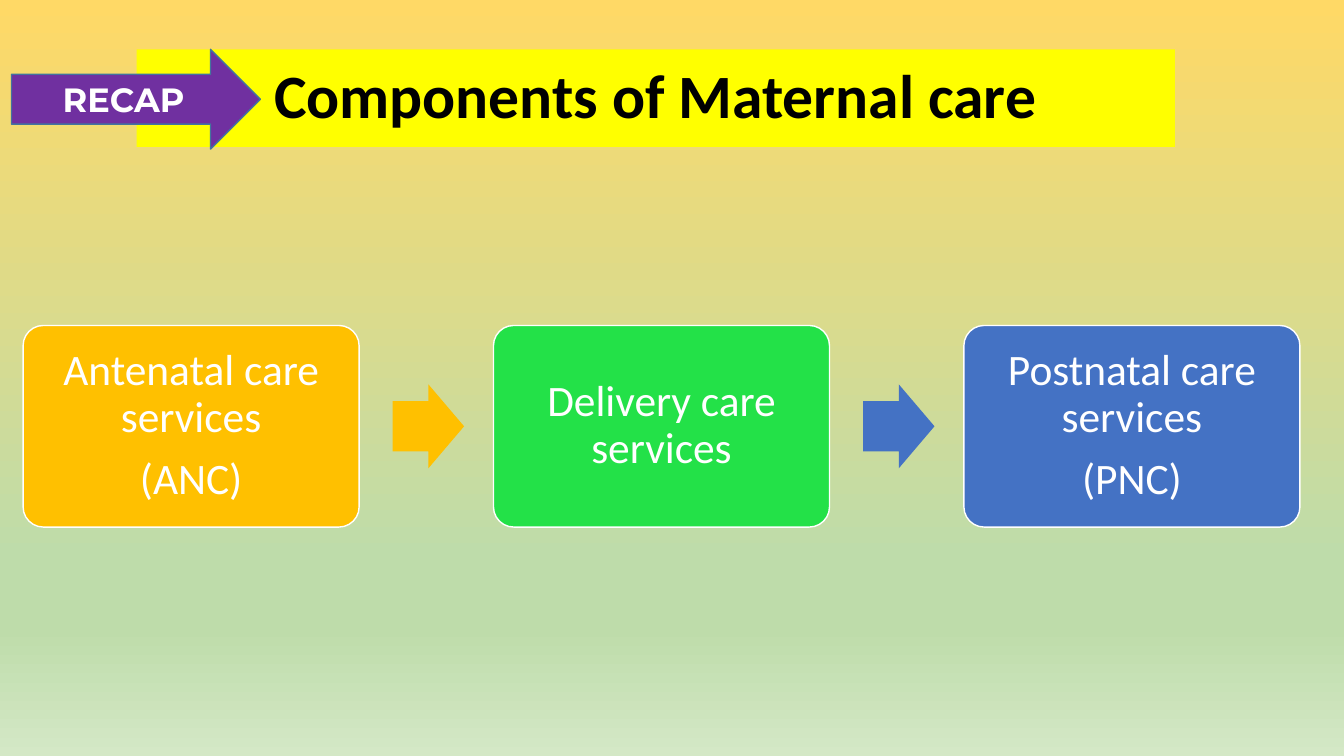
from copy import deepcopy

from pptx import Presentation
from pptx.dml.color import RGBColor
from pptx.enum.shapes import MSO_SHAPE
from pptx.enum.text import MSO_ANCHOR, PP_ALIGN
from pptx.oxml.ns import qn
from pptx.util import Emu, Pt

PX = 9525  # EMU in one px, slide is 1280 x 720 px
COLORS = {
    "yellow": "FFFF00", "amber": "FFC000", "green": "23E148", "blue": "4472C4",
    "purple": "7030A0", "outline": "43739E", "white": "FFFFFF", "black": "000000",
    "sky": "FFD966", "meadow": "BEDCAA", "ground": "D4E8C6",
}


def color(name):
    return RGBColor.from_string(COLORS[name])


class SlideBuilder:
    def __init__(self, slide, font_name):
        self.slide = slide
        self.font_name = font_name

    def background(self, stops):
        fill = self.slide.background.fill
        fill.gradient()
        fill.gradient_angle = 270
        stop_list = self.slide.element.find(".//" + qn("a:gsLst"))
        while len(stop_list) < len(stops):
            stop_list.append(deepcopy(stop_list[0]))
        for stop, (position, name) in zip(fill.gradient_stops, stops):
            stop.position = position
            stop.color.rgb = color(name)

    def shape(self, kind, box, fill, line=None, adjustments=()):
        shape = self.slide.shapes.add_shape(kind, *(Emu(n * PX) for n in box))
        shape.shadow.inherit = False
        shape.fill.solid()
        shape.fill.fore_color.rgb = color(fill)
        if line:
            shape.line.color.rgb = color(line)
            shape.line.width = Pt(1)
        else:
            shape.line.fill.background()
        for index, value in enumerate(adjustments):
            shape.adjustments[index] = value
        return shape

    def text(self, shape, lines, size, ink="white", bold=False, font_name=None,
             spacing=0.9, after=0, inset=None):
        frame = shape.text_frame
        frame.word_wrap = True
        frame.vertical_anchor = MSO_ANCHOR.MIDDLE
        if inset is not None:
            frame.margin_left = frame.margin_right = Emu(inset * PX)
            frame.margin_top = frame.margin_bottom = Emu(inset * PX)
        frame.text = "\n".join(lines)
        for paragraph in frame.paragraphs:
            paragraph.alignment = PP_ALIGN.CENTER
            paragraph.line_spacing = spacing
            paragraph.space_after = Pt(after)
            font = paragraph.font
            font.name = font_name or self.font_name
            font.size = Pt(size)
            font.bold = bold
            font.color.rgb = color(ink)


def main():
    presentation = Presentation()
    presentation.slide_width = Emu(1280 * PX)
    presentation.slide_height = Emu(720 * PX)
    slide = presentation.slides.add_slide(presentation.slide_layouts[6])
    builder = SlideBuilder(slide, "Calibri")
    builder.background([(0, "sky"), (0.74, "meadow"), (0.83, "meadow"), (1, "ground")])

    # Title bar
    title = builder.shape(MSO_SHAPE.RECTANGLE, (130, 47, 989, 93), "yellow")
    builder.text(title, ["Components of Maternal care"], 44, "black", bold=True)

    # Stages of care, each arrow in the colour of its step
    stages = [
        (["Antenatal care services", "(ANC)"], "amber", "amber"),
        (["Delivery care services"], "green", "blue"),
        (["Postnatal care services", "(PNC)"], "blue", None),
    ]
    pitch = 448
    for index, (lines, fill, arrow_fill) in enumerate(stages):
        left = 22 + index * pitch
        card = builder.shape(MSO_SHAPE.ROUNDED_RECTANGLE, (left, 310, 320, 192),
                             fill, "white", [0.1])
        builder.text(card, lines, 31, after=11, inset=12)
        if arrow_fill:
            builder.shape(MSO_SHAPE.RIGHT_ARROW, (left + 352, 366, 68, 80),
                          arrow_fill, adjustments=[0.6, 0.5])

    # Recap marker over the title bar
    recap = builder.shape(MSO_SHAPE.RIGHT_ARROW, (11, 47, 237, 95), "purple", "outline")
    builder.text(recap, ["RECAP"], 24, bold=True, font_name="Montserrat", spacing=1.0)

    presentation.save("out.pptx")


if __name__ == "__main__":
    main()
